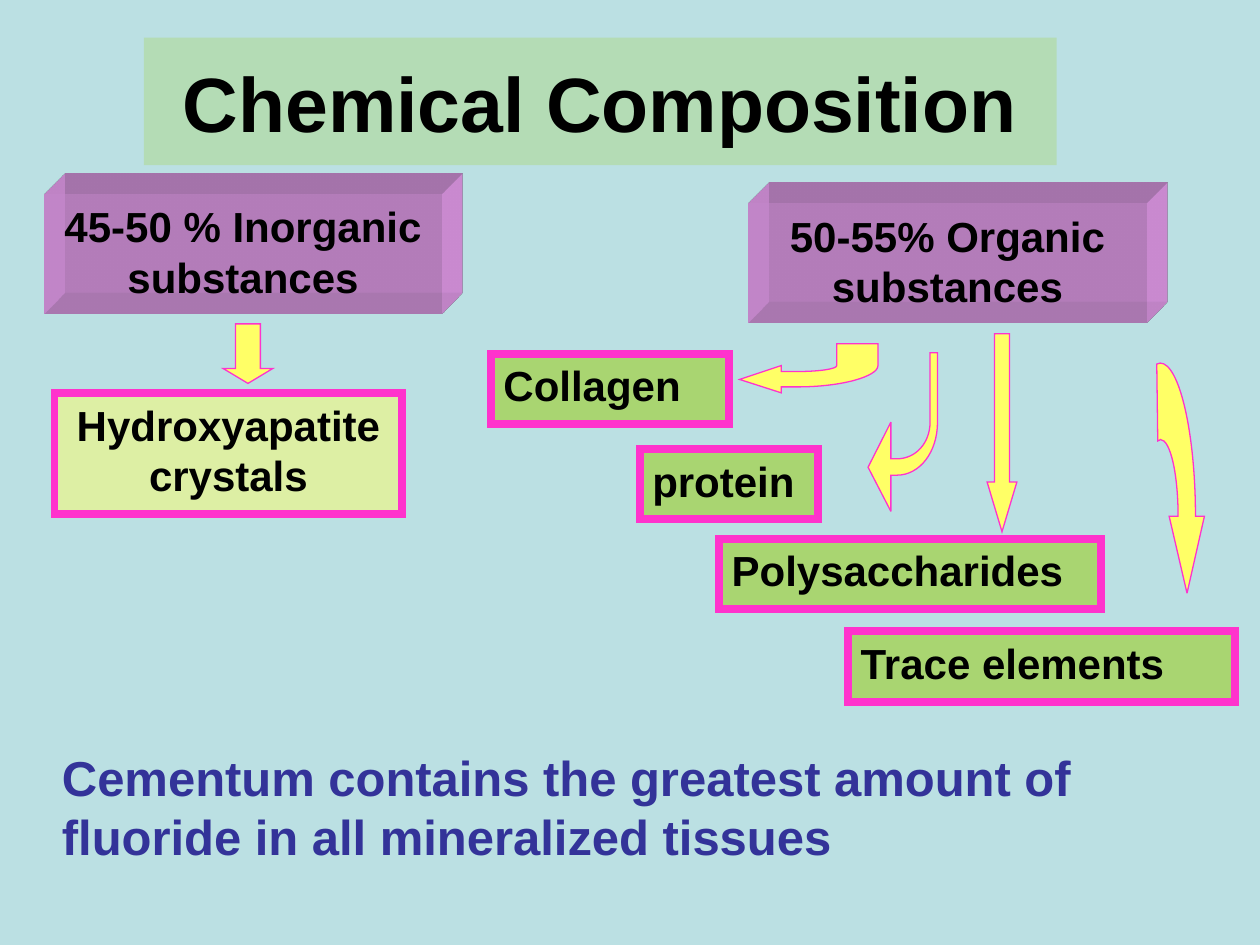
from lxml import etree
from pptx import Presentation
from pptx.dml.color import RGBColor
from pptx.enum import shapes, text
from pptx.oxml import ns, parse_xml
from pptx.util import Cm, Pt

BACKGROUND = RGBColor(0xBB, 0xE0, 0xE3)
BLACK = RGBColor(0, 0, 0)
NAVY = RGBColor(0x33, 0x33, 0x99)
GREEN = RGBColor(0x99, 0xCC, 0x00)
YELLOW = RGBColor(0xFF, 0xFF, 0x66)
PINK = RGBColor(0xFF, 0x33, 0xCC)
VIOLET = RGBColor(0xFF, 0x99, 0xFF)
CENTER, LEFT = text.PP_ALIGN.CENTER, text.PP_ALIGN.LEFT

# Content: lengths in centimetres (left, top, width, height)
TITLE = ("Chemical Composition", (2.9, 0.76, 18.4, 2.57))
BLOCKS = [
    ("45-50 % Inorganic substances", (0.89, 3.92, 8.02, 2.4)),
    ("50-55% Organic substances", (15.09, 4.11, 8.02, 2.4)),
]
COMPONENTS = [
    ("Hydroxyapatite crystals", (1.1, 7.93, 7.01, 2.44), YELLOW, CENTER),
    ("Collagen", (9.9, 7.13, 4.8, 1.42), GREEN, LEFT),
    ("protein", (12.9, 9.05, 3.6, 1.42), GREEN, LEFT),
    ("Polysaccharides", (14.5, 10.86, 7.7, 1.42), GREEN, LEFT),
    ("Trace elements", (17.1, 12.73, 7.8, 1.42), GREEN, LEFT),
]
NOTE = ("Cementum contains the greatest amount of fluoride "
        "in all mineralized tissues", (1, 14.94, 24.5, 2.62))
DOWN_ARROWS = [  # place, head length against width
    ((4.5, 6.53, 1.0, 1.2), 0.3),
    ((19.9, 6.73, 0.6, 3.99), 1.67),
]
# Two numbers make a straight step, six make a Bézier curve
CURVED_ARROWS = [
    [(14.91, 7.65), (15.75, 7.92), (15.75, 7.8), (16.08, 7.8),
     (16.97, 7.8, 17.7, 7.59, 17.7, 7.37), (17.7, 6.93), (16.87, 6.93),
     (16.87, 7.37), (16.87, 7.44, 16.51, 7.49, 16.08, 7.49),
     (15.75, 7.49), (15.75, 7.37)],
    [(17.5, 9.42), (17.96, 10.31), (17.96, 9.58), (18.08, 9.58),
     (18.54, 9.58, 18.9, 9.12, 18.9, 8.51), (18.9, 7.11), (18.75, 7.11),
     (18.75, 8.51), (18.75, 8.92, 18.47, 9.25, 18.08, 9.25),
     (17.96, 9.25), (17.96, 8.51)],
    [(23.75, 10.41), (23.75, 9.58, 23.6, 8.86, 23.39, 8.86),
     (23.39, 8.86, 23.37, 8.89, 23.34, 8.89), (23.32, 7.34),
     (23.34, 7.34, 23.37, 7.32, 23.39, 7.32),
     (23.77, 7.32, 24.1, 8.71, 24.1, 10.41),
     (24.28, 10.41), (23.93, 11.96), (23.57, 10.41)],
]
EXTRUSION = [
    '<a:scene3d %s><a:camera prst="legacyObliqueTopRight"/>'
    '<a:lightRig rig="legacyFlat3" dir="b"/></a:scene3d>',
    '<a:sp3d %s extrusionH="430200" prstMaterial="legacyMatte">'
    '<a:bevelT w="13500" h="13500" prst="angle"/>'
    '<a:bevelB w="13500" h="13500" prst="angle"/>'
    '<a:extrusionClr><a:srgbClr val="FF99FF"/></a:extrusionClr></a:sp3d>',
]


def fill(shape, color, opacity=100):
    shape.fill.solid()
    shape.fill.fore_color.rgb = color
    if opacity < 100:
        tint = shape.fill._xPr.find(ns.qn("a:solidFill"))[0]
        etree.SubElement(tint, ns.qn("a:alpha"), val=str(opacity * 1000))


def paint(shape, color, opacity=100, line_width=None):
    shape.shadow.inherit = False
    fill(shape, color, opacity)
    if line_width:
        shape.line.color.rgb = PINK
        shape.line.width = Pt(line_width)
        etree.SubElement(shape.line._ln, ns.qn("a:miter"), lim="800000")
    else:
        shape.line.fill.background()


def write(shape, words, size, align=LEFT, color=BLACK,
          anchor=text.MSO_ANCHOR.TOP):
    frame = shape.text_frame
    frame.word_wrap = True
    frame.auto_size = text.MSO_AUTO_SIZE.NONE
    frame.vertical_anchor = anchor
    para = frame.paragraphs[0]
    para.alignment = align
    span = para.add_run()
    span.text = words
    span.font.name = "Arial"
    span.font.size = Pt(size)
    span.font.bold = True
    span.font.color.rgb = color


def add_preset(page, kind, place):
    return page.shapes.add_shape(kind, *map(Cm, place))


def add_curved(page, steps):
    corners = [(Cm(step[-2]), Cm(step[-1])) for step in steps]
    builder = page.shapes.build_freeform(*corners[0])
    builder.add_line_segments(corners[1:], close=True)
    shape = builder.convert_to_shape()
    # Turn the six-number steps into curves
    segments = list(shape._element.spPr.find(".//" + ns.qn("a:path")))
    for step, segment in zip(steps, segments):
        if len(step) == 6:
            segment.tag = ns.qn("a:cubicBezTo")
            for i in (0, 1):
                x, y = Cm(step[2 * i]) - shape.left, Cm(step[2 * i + 1]) - shape.top
                control = etree.Element(ns.qn("a:pt"), x=str(x), y=str(y))
                segment.insert(i, control)
    return shape


def main():
    deck = Presentation()
    deck.slide_width, deck.slide_height = Cm(25.4), Cm(19.05)
    page = deck.slides.add_slide(deck.slide_layouts[5])
    page.background.fill.solid()
    page.background.fill.fore_color.rgb = BACKGROUND

    # Title
    words, place = TITLE
    title = page.shapes.title
    title.left, title.top, title.width, title.height = map(Cm, place)
    fill(title, GREEN, 20)
    write(title, words, 44, CENTER, anchor=text.MSO_ANCHOR.MIDDLE)

    # Raised blocks
    for words, place in BLOCKS:
        block = add_preset(page, shapes.MSO_SHAPE.RECTANGLE, place)
        paint(block, VIOLET, 61)
        write(block, words, 24, CENTER)
        for part in EXTRUSION:
            block._element.spPr.append(parse_xml(part % ns.nsdecls("a")))

    # Components
    for words, place, color, align in COMPONENTS:
        box = add_preset(page, shapes.MSO_SHAPE.RECTANGLE, place)
        paint(box, color, 50, 4.5)
        write(box, words, 24, align)

    # Closing note
    words, place = NOTE
    write(page.shapes.add_textbox(*map(Cm, place)), words, 28, color=NAVY)

    # Arrows
    for place, head in DOWN_ARROWS:
        arrow = add_preset(page, shapes.MSO_SHAPE.DOWN_ARROW, place)
        arrow.adjustments[0], arrow.adjustments[1] = 0.5, head
        paint(arrow, YELLOW, line_width=0.75)
    for steps in CURVED_ARROWS:
        paint(add_curved(page, steps), YELLOW, line_width=0.75)

    deck.save("out.pptx")


if __name__ == "__main__":
    main()
